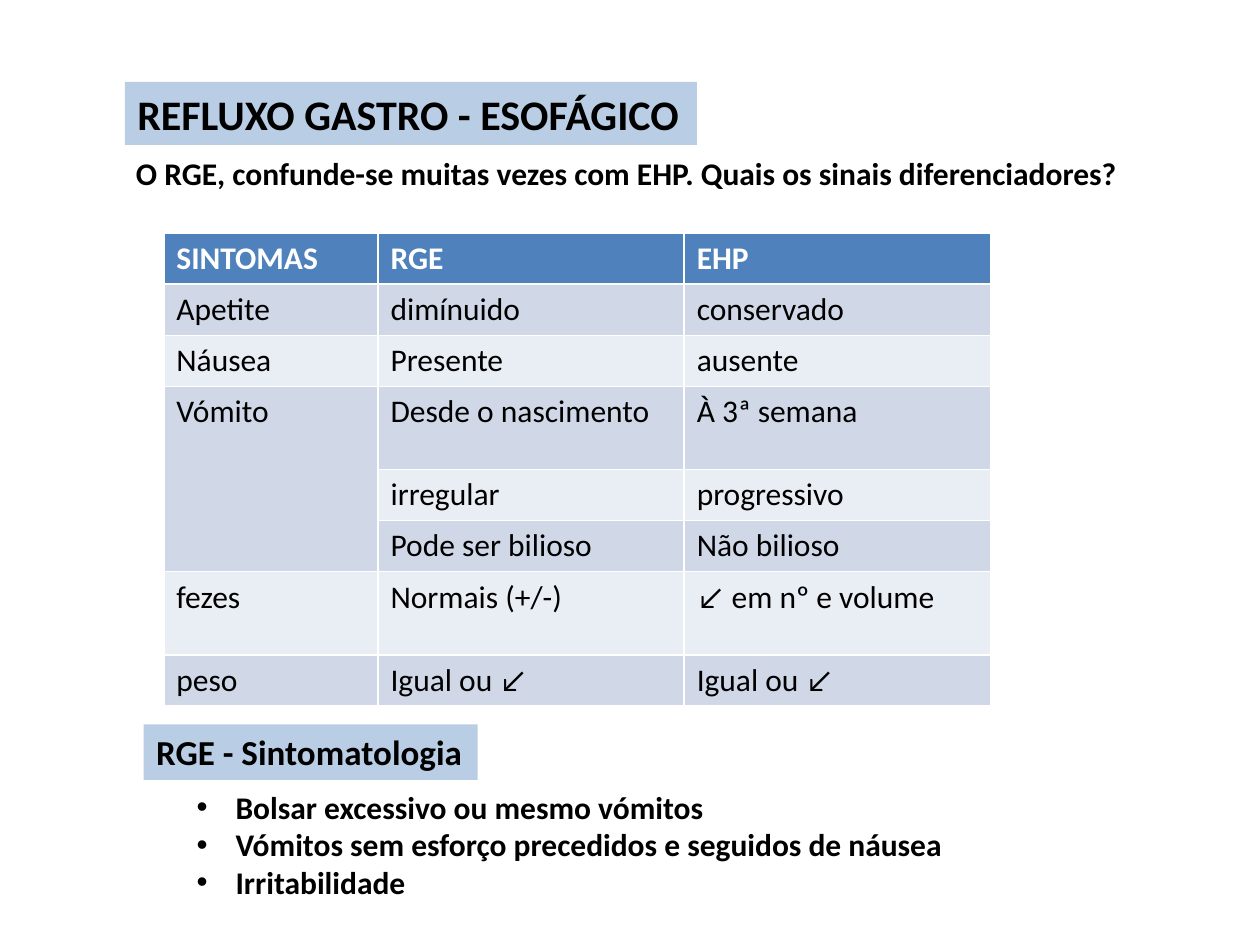
from pptx import Presentation
from pptx import util as u
from pptx.dml.color import RGBColor
from pptx.enum import shapes, text

BLACK = RGBColor(0x00, 0x00, 0x00)
WHITE = RGBColor(0xFF, 0xFF, 0xFF)
LABEL = RGBColor(0xB9, 0xCD, 0xE5)
HEAD = RGBColor(0x4F, 0x81, 0xBD)
BANDS = (RGBColor(0xE9, 0xED, 0xF4), RGBColor(0xD0, 0xD8, 0xE8))

# The slide is a grid of 100 columns by 75 rows of square cells
COLS, ROWS = 100, 75
CELL = u.Inches(0.1)

SIGNS = [
    ("SINTOMAS", "RGE", "EHP"),
    ("Apetite", "dimínuido", "conservado"),
    ("Náusea", "Presente", "ausente"),
    ("Vómito", "Desde o nascimento", "À 3ª semana"),
    ("", "irregular", "progressivo"),
    ("", "Pode ser bilioso", "Não bilioso"),
    ("fezes", "Normais (+/-)", "↙ em nº e volume"),
    ("peso", "Igual ou ↙", "Igual ou ↙"),
]
TALL = (3, 6)
WIDTHS = (17, 24.3, 24.3)
LIST = [
    "Bolsar excessivo ou mesmo vómitos",
    "Vómitos sem esforço precedidos e seguidos de náusea",
    "Irritabilidade",
]


def grid(n):
    return int(n * CELL)


def place(shape, box):
    for name, n in zip(("left", "top", "width", "height"), box):
        setattr(shape, name, grid(n))


def style(par, size=18, color=BLACK, bold=True):
    font = {"name": "Calibri", "size": u.Pt(size), "bold": bold}
    for run in par.runs:
        for name, value in font.items():
            setattr(run.font, name, value)
        run.font.color.rgb = color


def write(shape, lines, size=18):
    frame = shape.text_frame
    frame.text = "\n".join(lines)
    form = {
        "word_wrap": False,
        "auto_size": text.MSO_AUTO_SIZE.NONE,
        "vertical_anchor": text.MSO_ANCHOR.TOP,
    }
    for name, value in form.items():
        setattr(frame, name, value)
    for par in frame.paragraphs:
        par.alignment = text.PP_ALIGN.LEFT
        par.space_before = u.Pt(0)
        style(par, size)


def tint(shape):
    shape.fill.solid()
    shape.fill.fore_color.rgb = LABEL
    shape.line.fill.background()


def add_label(slide, line, box, size):
    rect = slide.shapes.add_shape(
        shapes.MSO_SHAPE.RECTANGLE, *map(grid, box))
    rect.shadow.inherit = False
    tint(rect)
    write(rect, [line], size)


def add_note(slide, line, box):
    write(slide.shapes.add_textbox(*map(grid, box)), [line])


def add_signs(slide, left, top):
    heights = [6.6 if r in TALL else 4 for r in range(len(SIGNS))]
    box = (left, top, sum(WIDTHS), sum(heights))
    table = slide.shapes.add_table(
        len(SIGNS), len(WIDTHS), *map(grid, box)).table
    for col, n in zip(table.columns, WIDTHS):
        col.width = grid(n)
    for row, n in zip(table.rows, heights):
        row.height = grid(n)
    for r, line in enumerate(SIGNS):
        for c, word in enumerate(line):
            cell = table.cell(r, c)
            cell.fill.solid()
            cell.fill.fore_color.rgb = BANDS[r % 2] if r else HEAD
            cell.text = word
            style(cell.text_frame.paragraphs[0],
                  color=BLACK if r else WHITE, bold=r == 0)
    # Vomiting covers three signs
    table.cell(3, 0).merge(table.cell(5, 0))


def fill_list(body, box):
    place(body, box)
    write(body, LIST)
    for par in body.text_frame.paragraphs:
        props = par._p.get_or_add_pPr()
        props.set("marL", str(grid(3.1)))
        props.set("indent", str(grid(-3.1)))


def main():
    deck = Presentation()
    deck.slide_width, deck.slide_height = grid(COLS), grid(ROWS)
    slide = deck.slides.add_slide(deck.slide_layouts[1])
    title, body = slide.placeholders

    # Heading and question
    place(title, (9.9, 6.5, 45.4, 5))
    tint(title)
    write(title, ["REFLUXO GASTRO - ESOFÁGICO"], 24)
    add_note(slide, "O RGE, confunde-se muitas vezes com EHP. "
             "Quais os sinais diferenciadores?", (9.8, 11.7, 80.5, 4))

    # Comparison of signs
    add_signs(slide, 13, 18.5)

    # Symptoms
    add_label(slide, "RGE - Sintomatologia", (11.4, 57.5, 26.5, 4.4), 20)
    fill_list(body, (14.6, 62, 61.6, 13))

    deck.save("out.pptx")


if __name__ == "__main__":
    main()
